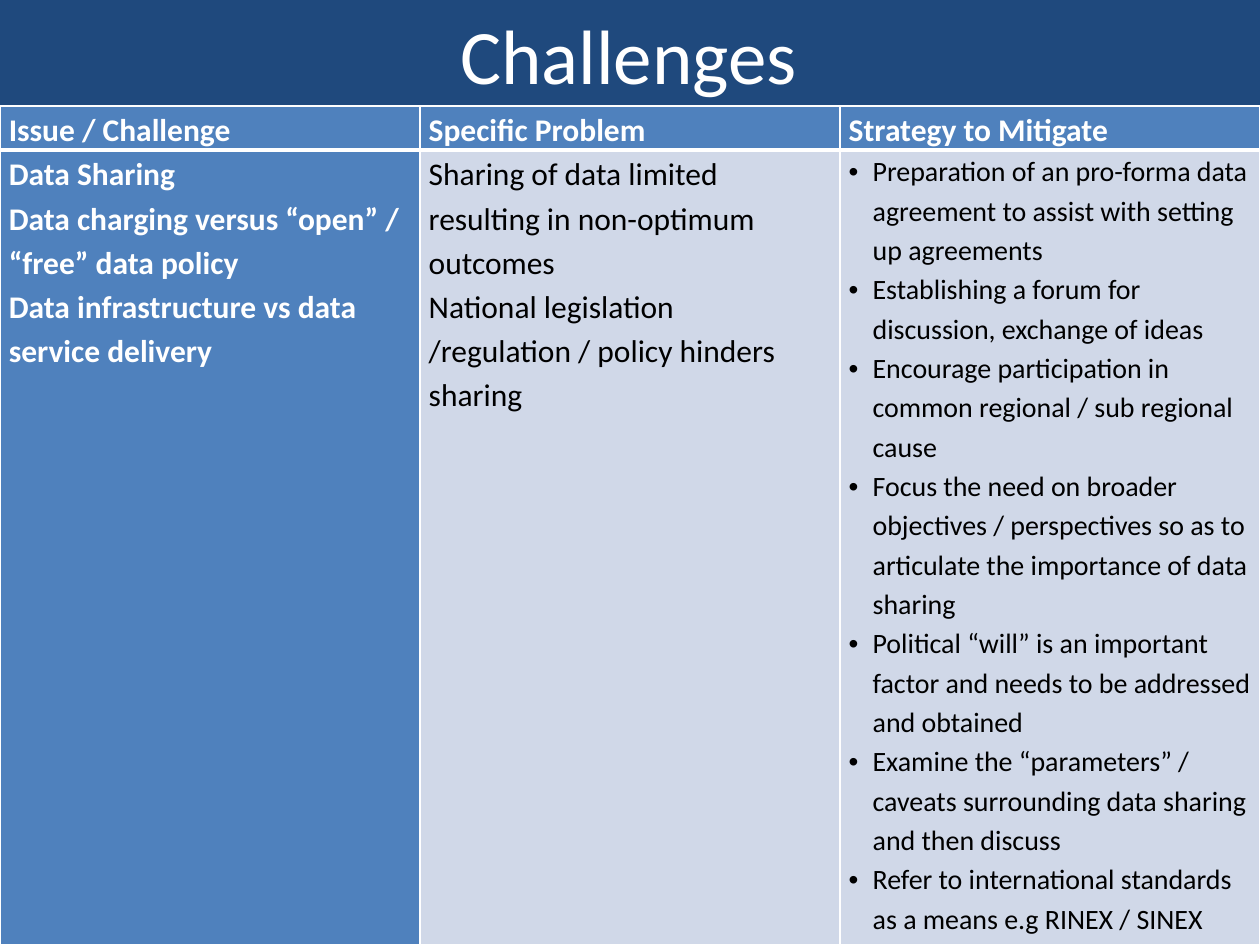
import pptx
import pptx.dml.color
import pptx.enum.text
import pptx.oxml
import pptx.oxml.ns
import pptx.util

COLORS = {
    "background": "1F497D",
    "accent": "4F81BD",
    "body": "D0D8E8",
    "light": "FFFFFF",
    "dark": "000000",
}
FONT = "Calibri"
WIDTH, HEIGHT = pptx.util.Inches(10), pptx.util.Inches(7.5)
TABLE_TOP = pptx.util.Inches(0.84)
HEADER_HEIGHT = pptx.util.Inches(0.35)
BULLET_INDENT = pptx.util.Inches(0.19)

HEADERS = ["Issue / Challenge", "Specific Problem", "Strategy to Mitigate"]
ISSUES = [
    "Data Sharing",
    "Data charging versus “open” / “free” data policy",
    "Data infrastructure vs data service delivery",
]
PROBLEMS = [
    "Sharing of data limited resulting in non-optimum outcomes",
    "National legislation /regulation / policy hinders sharing",
]
STRATEGIES = [
    "Preparation of an pro-forma data agreement to assist with setting up agreements",
    "Establishing a forum for discussion, exchange of ideas",
    "Encourage participation in common regional / sub regional cause",
    "Focus the need on broader objectives / perspectives so as to articulate "
    "the importance of data sharing",
    "Political “will” is an important factor and needs to be addressed and obtained",
    "Examine the “parameters” / caveats surrounding data sharing and then discuss",
    "Refer to international standards as a means e.g RINEX / SINEX",
]


def rgb(name):
    return pptx.dml.color.RGBColor.from_string(COLORS[name])


def format_font(font, size, color, bold=False):
    font.name = FONT
    font.size = pptx.util.Pt(size)
    font.bold = bold
    font.color.rgb = rgb(color)


def add_title(slide, text):
    title = slide.shapes.title
    title.left, title.top = round(WIDTH * 0.075), 0
    title.width, title.height = round(WIDTH * 0.862), pptx.util.Inches(0.85)
    frame = title.text_frame
    frame.text = text
    frame.auto_size = pptx.enum.text.MSO_AUTO_SIZE.NONE
    frame.vertical_anchor = pptx.enum.text.MSO_ANCHOR.MIDDLE
    frame.paragraphs[0].alignment = pptx.enum.text.PP_ALIGN.CENTER
    format_font(frame.paragraphs[0].runs[0].font, 44, "light")


def set_borders(cell, **widths):
    """Draw white cell borders; widths are points, by side L, R, T, B."""
    properties = cell._tc.get_or_add_tcPr()
    for side in "LRTB":
        width = pptx.util.Pt(widths.get(side, 1))
        properties.append(pptx.oxml.parse_xml(
            f'<a:ln{side} {pptx.oxml.ns.nsdecls("a")} w="{width}"><a:solidFill>'
            f'<a:srgbClr val="{COLORS["light"]}"/></a:solidFill></a:ln{side}>'))


def add_bullet(paragraph):
    properties = paragraph._p.get_or_add_pPr()
    properties.set("marL", str(BULLET_INDENT))
    properties.set("indent", str(-BULLET_INDENT))
    for tag, name, value in (("buFont", "typeface", "Arial"), ("buChar", "char", "•")):
        properties.append(pptx.oxml.parse_xml(
            f'<a:{tag} {pptx.oxml.ns.nsdecls("a")} {name}="{value}"/>'))


def fill_cell(cell, lines, fill, color, size=18, bold=False, bullets=False):
    cell.margin_left = cell.margin_right = pptx.util.Inches(0.07)
    cell.margin_top = cell.margin_bottom = 0
    cell.fill.solid()
    cell.fill.fore_color.rgb = rgb(fill)
    cell.text_frame.text = "\n".join(lines)
    for paragraph in cell.text_frame.paragraphs:
        paragraph.line_spacing = 1.15
        if bullets:
            add_bullet(paragraph)
        format_font(paragraph.runs[0].font, size, color, bold)


def add_challenge_table(slide):
    table = slide.shapes.add_table(
        2, len(HEADERS), 0, TABLE_TOP, WIDTH, HEIGHT - TABLE_TOP).table
    table.horz_banding = False
    table.rows[0].height = HEADER_HEIGHT
    table.rows[1].height = HEIGHT - TABLE_TOP - HEADER_HEIGHT

    # Header row, with a thick rule below it
    for column, header in enumerate(HEADERS):
        set_borders(table.cell(0, column), B=3)
        set_borders(table.cell(1, column), T=3)
        fill_cell(table.cell(0, column), [header], "accent", "light", bold=True)

    # Body row
    fill_cell(table.cell(1, 0), ISSUES, "accent", "light", bold=True)
    fill_cell(table.cell(1, 1), PROBLEMS, "body", "dark")
    fill_cell(table.cell(1, 2), STRATEGIES, "body", "dark", size=16, bullets=True)


def main():
    presentation = pptx.Presentation()
    presentation.slide_width, presentation.slide_height = WIDTH, HEIGHT
    slide = presentation.slides.add_slide(presentation.slide_layouts[5])
    slide.background.fill.solid()
    slide.background.fill.fore_color.rgb = rgb("background")
    add_title(slide, "Challenges ")
    add_challenge_table(slide)
    presentation.save("out.pptx")


if __name__ == "__main__":
    main()
